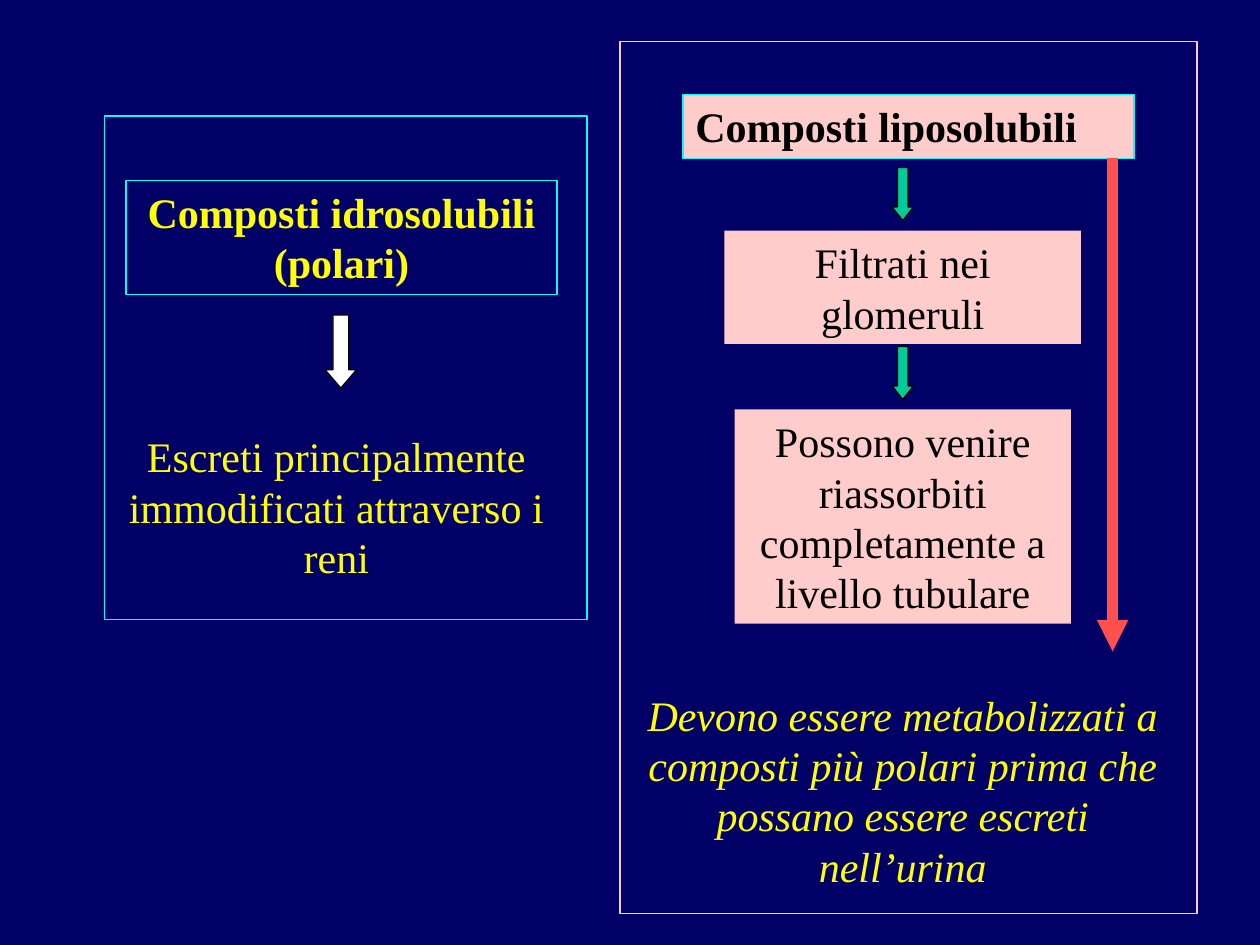
"""Build a slide on the excretion of water-soluble and fat-soluble compounds."""
from lxml.etree import SubElement
from pptx import Presentation
from pptx.dml.color import RGBColor
from pptx.enum.shapes import MSO_CONNECTOR, MSO_SHAPE
from pptx.enum.text import MSO_ANCHOR, PP_ALIGN
from pptx.oxml.ns import qn
from pptx.util import Inches, Pt

COLORS = {
    "navy": "000066",
    "cyan": "00FFFF",
    "yellow": "FFFF00",
    "pink": "FFCCCC",
    "black": "000000",
    "white": "FFFFFF",
    "green": "00CC99",
    "red": "FF5050",
}


def add_box(kind, position, text="", fill=None, line=None, color="black",
            bold=False, italic=False, align=PP_ALIGN.CENTER):
    shape = slide.shapes.add_shape(kind, *map(Inches, position))
    shape.shadow.inherit = False
    if fill:
        shape.fill.solid()
        shape.fill.fore_color.rgb = RGBColor.from_string(COLORS[fill])
    else:
        shape.fill.background()
    if line:
        shape.line.color.rgb = RGBColor.from_string(COLORS[line])
        shape.line.width = Pt(0.75)
    else:
        shape.line.fill.background()
    if text:
        frame = shape.text_frame
        frame.word_wrap = True
        frame.vertical_anchor = MSO_ANCHOR.TOP
        paragraph = frame.paragraphs[0]
        paragraph.alignment = align
        run = paragraph.add_run()
        run.text = text
        run.font.name = "Times New Roman"
        run.font.size = Pt(24)
        run.font.bold = bold
        run.font.italic = italic
        run.font.color.rgb = RGBColor.from_string(COLORS[color])
    return shape


presentation = Presentation()
presentation.slide_width = Inches(10)
presentation.slide_height = Inches(7.5)
slide = presentation.slides.add_slide(presentation.slide_layouts[6])
slide.background.fill.solid()
slide.background.fill.fore_color.rgb = RGBColor.from_string(COLORS["navy"])

rectangle = MSO_SHAPE.RECTANGLE
add_box(rectangle, (1, 1.43, 3.42, 0.91), "Composti idrosolubili (polari)",
        fill="navy", line="cyan", color="yellow", bold=True)
add_box(rectangle, (0.92, 3.37, 3.5, 1.3),
        "Escreti principalmente immodificati attraverso i reni",
        fill="navy", color="yellow")
add_box(rectangle, (5.42, 0.75, 3.58, 0.51), "Composti liposolubili",
        fill="pink", line="cyan", bold=True, align=PP_ALIGN.LEFT)
add_box(rectangle, (5.75, 1.83, 2.83, 0.9), "Filtrati nei glomeruli", fill="pink")
add_box(rectangle, (5.83, 3.25, 2.67, 1.7),
        "Possono venire riassorbiti completamente a livello tubulare", fill="pink")
add_box(rectangle, (5, 5.42, 4.33, 1.7),
        "Devono essere metabolizzati a composti più polari prima che "
        "possano essere escreti nell’urina",
        fill="navy", color="yellow", italic=True)

add_box(rectangle, (0.83, 0.92, 3.83, 4), line="cyan")
add_box(rectangle, (4.92, 0.33, 4.58, 6.92), line="pink")

for position, fill, head_length in (
    ((2.58, 2.5, 0.25, 0.58), "white", 0.58),
    ((7.08, 1.33, 0.17, 0.42), "green", 0.63),
    ((7.08, 2.75, 0.17, 0.42), "green", 0.63),
):
    arrow = add_box(MSO_SHAPE.DOWN_ARROW, position, fill=fill, line="black")
    arrow.adjustments[0] = 0.5
    arrow.adjustments[1] = head_length

bypass = slide.shapes.add_connector(
    MSO_CONNECTOR.STRAIGHT, Inches(8.83), Inches(1.25), Inches(8.83), Inches(5.17))
bypass.line.color.rgb = RGBColor.from_string(COLORS["red"])
bypass.line.width = Pt(6)
SubElement(bypass.line._get_or_add_ln(), qn("a:tailEnd"), type="triangle")
SubElement(bypass._element.spPr, qn("a:effectLst"))

presentation.save("out.pptx")
